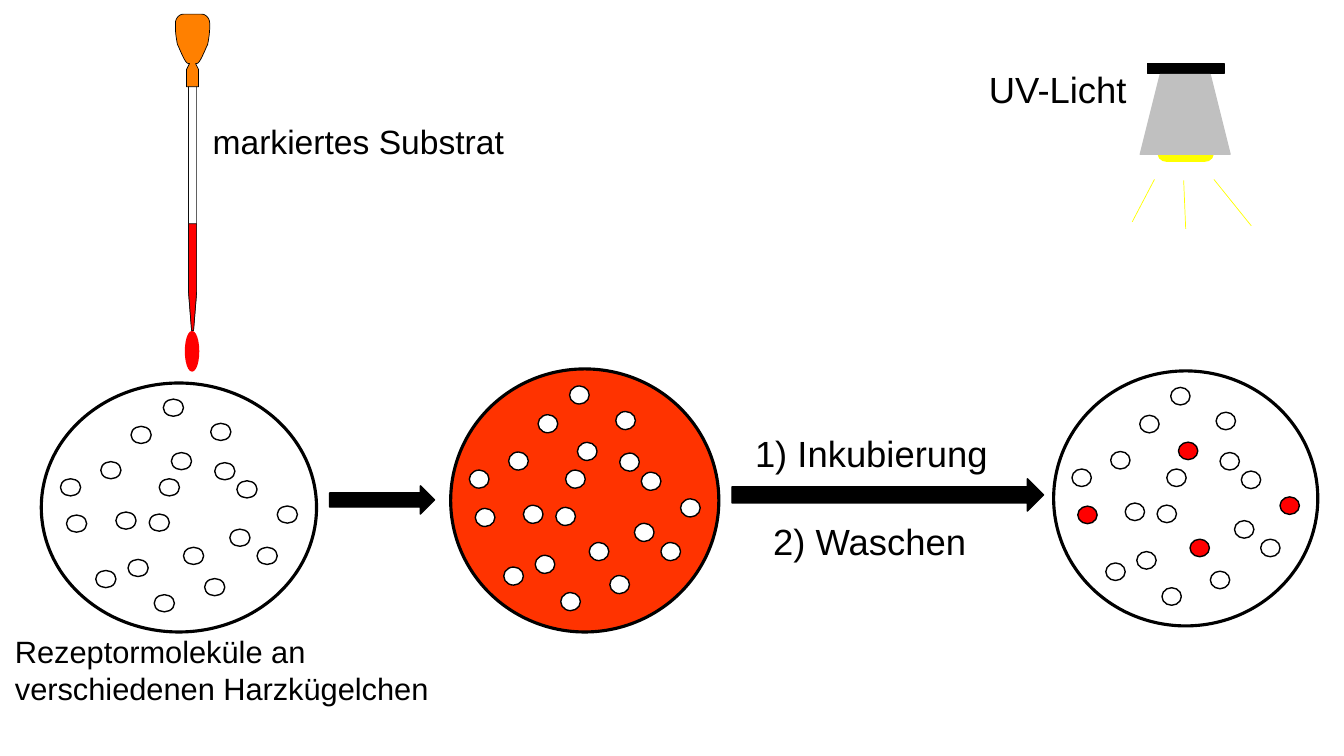
from dataclasses import dataclass

from lxml import etree
from pptx import Presentation
from pptx.dml.color import RGBColor
from pptx.enum.shapes import MSO_CONNECTOR, MSO_SHAPE
from pptx.enum.text import MSO_AUTO_SIZE
from pptx.oxml.ns import qn
from pptx.shapes.autoshape import Shape
from pptx.shapes.shapetree import GroupShapes, SlideShapes
from pptx.util import Inches, Pt

ELLIPSE = MSO_SHAPE.OVAL
ARROW = MSO_SHAPE.RIGHT_ARROW
RECTANGLE = MSO_SHAPE.RECTANGLE
TERMINATOR = MSO_SHAPE.FLOWCHART_TERMINATOR
TRAPEZOID = MSO_SHAPE.TRAPEZOID
STRAIGHT = MSO_CONNECTOR.STRAIGHT
FIT_SHAPE = MSO_AUTO_SIZE.SHAPE_TO_FIT_TEXT

BLACK = RGBColor(0x00, 0x00, 0x00)
WHITE = RGBColor(0xFF, 0xFF, 0xFF)
RED = RGBColor(0xFF, 0x00, 0x00)
SOLUTION_RED = RGBColor(0xFF, 0x33, 0x00)
GLASS_EDGE = RGBColor(0x0D, 0x0D, 0x0D)
ORANGE = RGBColor(0xFF, 0x80, 0x00)
GREY = RGBColor(0xC0, 0xC0, 0xC0)
YELLOW = RGBColor(0xFF, 0xFF, 0x00)

FONT = "Arial"
Point = tuple[float, float]
Shapes = SlideShapes | GroupShapes


@dataclass(frozen=True)
class Box:
    left: float
    top: float
    width: float
    height: float


@dataclass(frozen=True)
class Dish:
    box: Box
    fill: RGBColor
    marked: frozenset[int] = frozenset()


@dataclass(frozen=True)
class Part:
    kind: MSO_SHAPE
    box: Box
    fill: RGBColor


@dataclass(frozen=True)
class Label:
    box: Box
    size: int
    lines: tuple[str, ...]


@dataclass(frozen=True)
class Ray:
    start: Point
    end: Point


FIRST_DISH = Box(0.41, 3.8, 2.73, 2.47)
BEAD_WIDTH, BEAD_HEIGHT = 0.2, 0.17
BEADS: list[Point] = [
    (0.59, 0.78), (0.89, 0.43), (0.25, 1.31), (0.54, 1.86), (0.74, 1.28),
    (1.68, 0.4), (1.29, 0.69), (1.94, 0.97), (1.17, 0.95), (0.86, 1.75),
    (0.19, 0.95), (1.41, 1.63), (1.72, 0.79), (1.62, 1.94), (2.14, 1.63),
    (1.12, 2.1), (1.07, 1.3), (1.87, 1.45), (2.34, 1.22), (1.21, 0.16),
]
DISHES = [
    Dish(FIRST_DISH, WHITE),
    Dish(Box(4.47, 3.66, 2.66, 2.61), SOLUTION_RED),
    Dish(Box(10.45, 3.68, 2.62, 2.53), WHITE, frozenset({2, 6, 11, 18})),
]
ARROWS = [
    Part(ARROW, Box(3.27, 4.82, 1.04, 0.28), BLACK),
    Part(ARROW, Box(7.26, 4.75, 3.09, 0.32), BLACK),
]
DROP = Part(ELLIPSE, Box(1.84, 3.29, 0.13, 0.39), RED)
LAMP = [
    Part(RECTANGLE, Box(11.38, 0.63, 0.76, 0.1), BLACK),
    Part(TERMINATOR, Box(11.49, 1.47, 0.54, 0.13), YELLOW),
    Part(TRAPEZOID, Box(11.31, 0.74, 0.89, 0.79), GREY),
]
RAYS = [
    Ray((12.04, 1.78), (12.41, 2.24)),
    Ray((11.45, 1.78), (11.23, 2.2)),
    Ray((11.74, 1.79), (11.76, 2.27)),
]
LAMP_LABEL = Label(Box(9.71, 0.62, 1.58, 0.54), 26, ("UV-Licht",))
LABELS = [
    Label(Box(2.01, 1.15, 3.12, 0.5), 24, ("markiertes Substrat",)),
    Label(Box(0.05, 6.23, 4.36, 0.84), 22,
          ("Rezeptormoleküle an", "verschiedenen Harzkügelchen")),
    Label(Box(7.39, 4.23, 2.54, 0.54), 26, ("1) Inkubierung",)),
    Label(Box(7.57, 5.1, 2.14, 0.54), 26, ("2) Waschen",)),
]
PIPETTE_AXIS = 1.91


def paint(shape: Shape, fill: RGBColor, edge: RGBColor, weight: float) -> None:
    shape.shadow.inherit = False
    shape.fill.solid()
    shape.fill.fore_color.rgb = fill
    shape.line.color.rgb = edge
    shape.line.width = Pt(weight)


def add_part(shapes: Shapes, part: Part, edge: RGBColor, weight: float = 1) -> None:
    box = part.box
    shape = shapes.add_shape(part.kind, Inches(box.left), Inches(box.top),
                             Inches(box.width), Inches(box.height))
    paint(shape, part.fill, edge, weight)


def add_dish(shapes: Shapes, dish: Dish) -> None:
    group = shapes.add_group_shape().shapes
    box = dish.box
    add_part(group, Part(ELLIPSE, box, dish.fill), BLACK, 2.25)
    across = box.width / FIRST_DISH.width
    down = box.height / FIRST_DISH.height
    for index, (x, y) in enumerate(BEADS):
        bead = Box(box.left + x * across, box.top + y * down,
                   BEAD_WIDTH * across, BEAD_HEIGHT * down)
        add_part(group, Part(ELLIPSE, bead, RED if index in dish.marked else WHITE), BLACK)


def curve(start: Point, first: Point, second: Point, end: Point) -> list[Point]:
    steps = 8
    points = []
    for step in range(steps + 1):
        t = step / steps
        weights = ((1 - t) ** 3, 3 * t * (1 - t) ** 2, 3 * t * t * (1 - t), t ** 3)
        corners = (start, first, second, end)
        points.append((sum(w * c[0] for w, c in zip(weights, corners)),
                       sum(w * c[1] for w, c in zip(weights, corners))))
    return points


def add_symmetric(shapes: Shapes, right: list[Point], fill: RGBColor, edge: RGBColor) -> None:
    left = [(2 * PIPETTE_AXIS - x, y) for x, y in reversed(right)]
    outline = [(Inches(x), Inches(y)) for x, y in right + left]
    builder = shapes.build_freeform(*outline[0])
    builder.add_line_segments(outline[1:], close=True)
    paint(builder.convert_to_shape(), fill, edge, 0.5)


def add_pipette(shapes: Shapes) -> None:
    for top, tip, fill in ((0.85, 3.27, WHITE), (2.22, 3.28, RED)):
        add_symmetric(shapes, [(1.95, top), (1.95, 2.9), (1.92, tip)], fill, GLASS_EDGE)
    bulb = curve((2, 0.14), (2.04, 0.14), (2.08, 0.18), (2.08, 0.23))
    bulb += curve((2.08, 0.28), (2.08, 0.32), (2.07, 0.39), (2.06, 0.44))
    bulb += curve((2.06, 0.44), (2.03, 0.5), (1.98, 0.64), (1.95, 0.63))
    bulb += [(1.94, 0.63), (1.97, 0.69), (1.97, 0.86)]
    add_symmetric(shapes, bulb, ORANGE, BLACK)
    add_part(shapes, DROP, RED)


def add_label(shapes: Shapes, label: Label) -> None:
    box = label.box
    frame = shapes.add_textbox(Inches(box.left), Inches(box.top),
                               Inches(box.width), Inches(box.height)).text_frame
    frame.word_wrap = False
    frame.auto_size = FIT_SHAPE
    for index, line in enumerate(label.lines):
        para = frame.add_paragraph() if index else frame.paragraphs[0]
        span = para.add_run()
        span.text = line
        span.font.name = FONT
        span.font.size = Pt(label.size)
        span.font.color.rgb = BLACK


def add_lamp(shapes: Shapes) -> None:
    group = shapes.add_group_shape().shapes
    for part in LAMP:
        add_part(group, part, part.fill)
    add_label(group, LAMP_LABEL)
    for ray in RAYS:
        beam = group.add_connector(STRAIGHT, *map(Inches, ray.start + ray.end))
        beam.line.color.rgb = YELLOW
        beam.line.width = Pt(0.5)
        etree.SubElement(beam._element.spPr, qn("a:effectLst"))


def main() -> None:
    deck = Presentation()
    deck.slide_width, deck.slide_height = Inches(13.33), Inches(7.5)
    page = deck.slides.add_slide(deck.slide_layouts[6])
    for dish in DISHES:
        add_dish(page.shapes, dish)
    add_pipette(page.shapes)
    for arrow in ARROWS:
        add_part(page.shapes, arrow, BLACK)
    add_lamp(page.shapes)
    for label in LABELS:
        add_label(page.shapes, label)
    deck.save("out.pptx")


if __name__ == "__main__":
    main()
